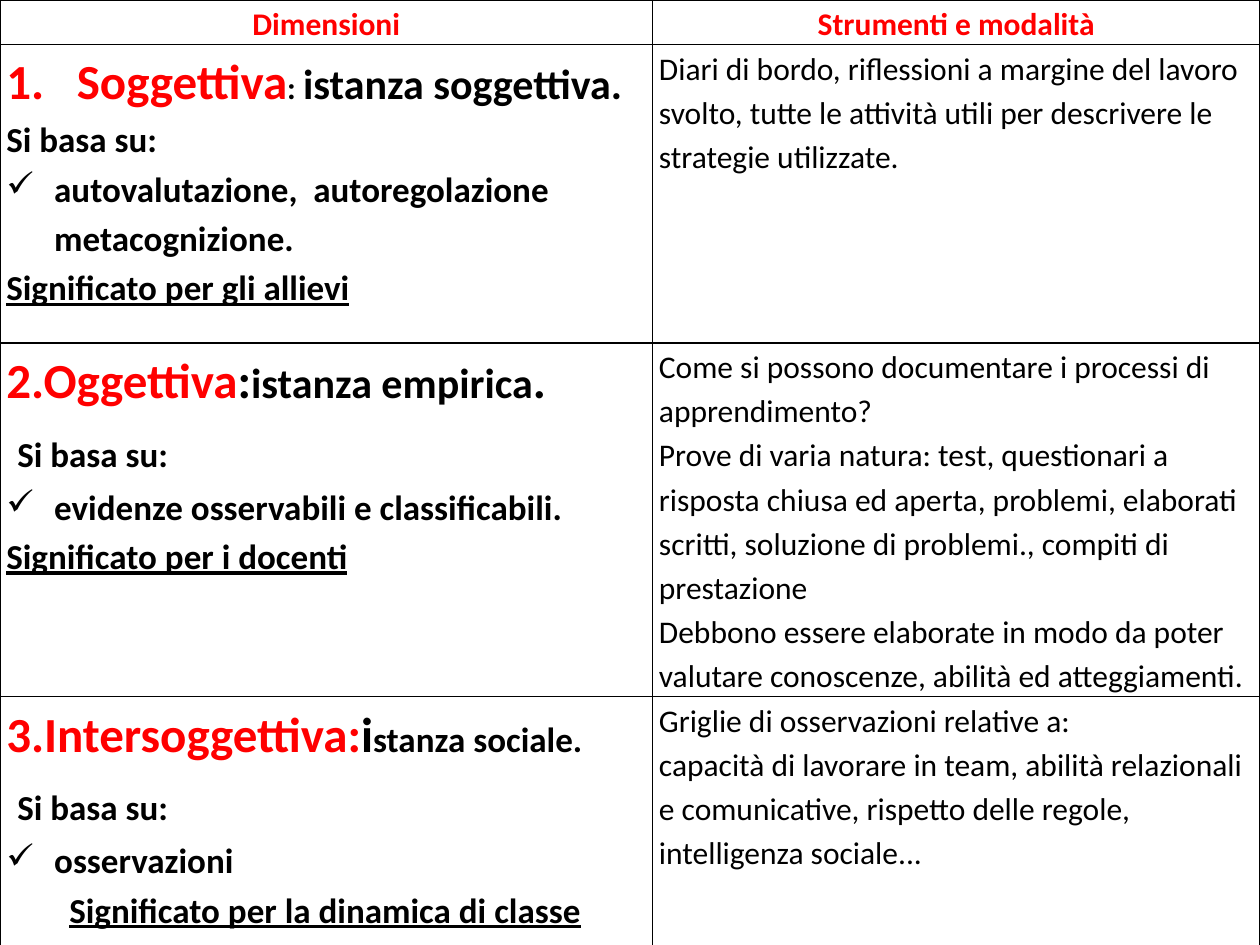
import dataclasses
import pptx
import pptx.util
import pptx.dml.color
import pptx.enum.text
import pptx.oxml

Inches = pptx.util.Inches
Pt = pptx.util.Pt
Align = pptx.enum.text.PP_ALIGN
NS = 'xmlns:a="http://schemas.openxmlformats.org/drawingml/2006/main"'


@dataclasses.dataclass
class Theme:
    font: str = "Calibri"
    red: str = "FF0000"
    black: str = "000000"
    head: int = 28
    lead: int = 24
    body: int = 20
    small: int = 18
    spacing: float = 1.15
    border: int = 1


class Deck:
    def __init__(self, theme):
        self.theme = theme
        self.file = pptx.Presentation()
        self.file.slide_width, self.file.slide_height = Inches(10), Inches(7.5)
        self.slide = self.file.slides.add_slide(self.file.slide_layouts[6])

    def table(self, widths, heights, rows):
        frame = self.slide.shapes.add_table(
            len(heights), len(widths), 0, 0,
            Inches(sum(widths)), Inches(sum(heights)))
        grid = frame.table
        grid.first_row = grid.horz_banding = False
        for col, width in zip(grid.columns, widths):
            col.width = Inches(width)
        for row, height, cells in zip(grid.rows, heights, rows):
            row.height = Inches(height)
            for cell, paras in zip(row.cells, cells):
                self.cell(cell, paras)

    def cell(self, cell, paras):
        side, edge = Inches(0.05), Inches(0)
        form = {"margin_left": side, "margin_right": side,
                "margin_top": edge, "margin_bottom": edge}
        for name, value in form.items():
            setattr(cell, name, value)
        cell.fill.background()
        self.border(cell)
        for i, para in enumerate(paras):
            frame = cell.text_frame
            target = frame.paragraphs[0] if i == 0 else frame.add_paragraph()
            self.para(target, **para)

    def border(self, cell):
        props = cell._tc.get_or_add_tcPr()
        for i, side in enumerate("LRTB"):
            props.insert(i, pptx.oxml.parse_xml(
                f'<a:ln{side} {NS} w="{Pt(self.theme.border)}"><a:solidFill>'
                f'<a:srgbClr val="{self.theme.black}"/></a:solidFill></a:ln{side}>'))

    def para(self, para, runs, align=Align.LEFT, left=0, first=0, bullet=None):
        """Fill a paragraph; bullet is the XML tag that sets its mark."""
        para.alignment = align
        para.line_spacing = self.theme.spacing
        props = para._p.get_or_add_pPr()
        props.set("marL", str(Inches(left)))
        props.set("indent", str(Inches(first)))
        props.append(pptx.oxml.parse_xml(f"<a:{bullet or 'buNone'} {NS}/>"))
        for text, size, color, form in runs:
            run = para.add_run()
            run.text = text
            style = {"name": self.theme.font, "size": Pt(size), **form}
            for name, value in style.items():
                setattr(run.font, name, value)
            run.font.color.rgb = pptx.dml.color.RGBColor.from_string(color)

    def save(self):
        self.file.save("out.pptx")


theme = Theme()


def bold(text, size=theme.body, color=theme.black, **form):
    return text, size, color, {"bold": True, **form}


def label(text):
    return [{"runs": [bold(text, theme.small, theme.red)], "align": Align.CENTER}]


def check(text):
    return {"runs": [bold(text)], "left": 0.38, "first": -0.38,
            "bullet": 'buChar char="✓"'}


def under(text, left=0):
    return {"runs": [bold(text, underline=True)], "left": left}


def plain(*texts):
    return [{"runs": [(text, theme.small, theme.black, {"bold": False})]}
            for text in texts]


def main():
    deck = Deck(theme)
    basis = bold("Si basa su:")
    based = {"runs": [bold(" ", theme.head), basis]}
    number = {"left": 0.56, "first": -0.56}

    inner = [
        {"runs": [bold("Soggettiva", theme.head, theme.red),
                  bold(": ", theme.small),
                  bold("istanza soggettiva.", theme.lead),
                  bold(" ", theme.small)],
         "bullet": 'buAutoNum type="arabicPeriod"', **number},
        {"runs": [basis], **number},
        check("autovalutazione,  autoregolazione metacognizione."),
        under("Significato per gli allievi"),
    ]
    outer = [
        {"runs": [bold("2.Oggettiva", theme.head, theme.red),
                  bold(":", theme.head),
                  bold("istanza empirica", theme.lead),
                  bold(".", theme.head)]},
        based,
        check("evidenze osservabili e classificabili."),
        under("Significato per i docenti"),
    ]
    social = [
        {"runs": [bold("3.Intersoggettiva:", theme.head, theme.red),
                  bold("i", theme.head),
                  bold("stanza sociale.")]},
        based,
        check("osservazioni"),
        under("Significato per la dinamica di classe", 0.5),
    ]
    rows = [
        [label("Dimensioni"), label("Strumenti e modalità")],
        [inner, plain(
            "Diari di bordo, riflessioni a margine del lavoro svolto, tutte le "
            "attività utili per descrivere le strategie utilizzate.")],
        [outer, plain(
            "Come si possono documentare i processi di apprendimento?",
            "Prove di varia natura: test, questionari a risposta chiusa ed "
            "aperta, problemi, elaborati scritti, soluzione di problemi., "
            "compiti di prestazione",
            "Debbono essere elaborate in modo da poter valutare conoscenze, "
            "abilità ed atteggiamenti.")],
        [social, plain(
            "Griglie di osservazioni relative a:",
            "capacità di lavorare in team, abilità relazionali e comunicative, "
            "rispetto delle regole, intelligenza sociale...")],
    ]
    deck.table([5.18, 4.82], [0.33, 2.37, 2.64, 2.16], rows)
    deck.save()


if __name__ == "__main__":
    main()
